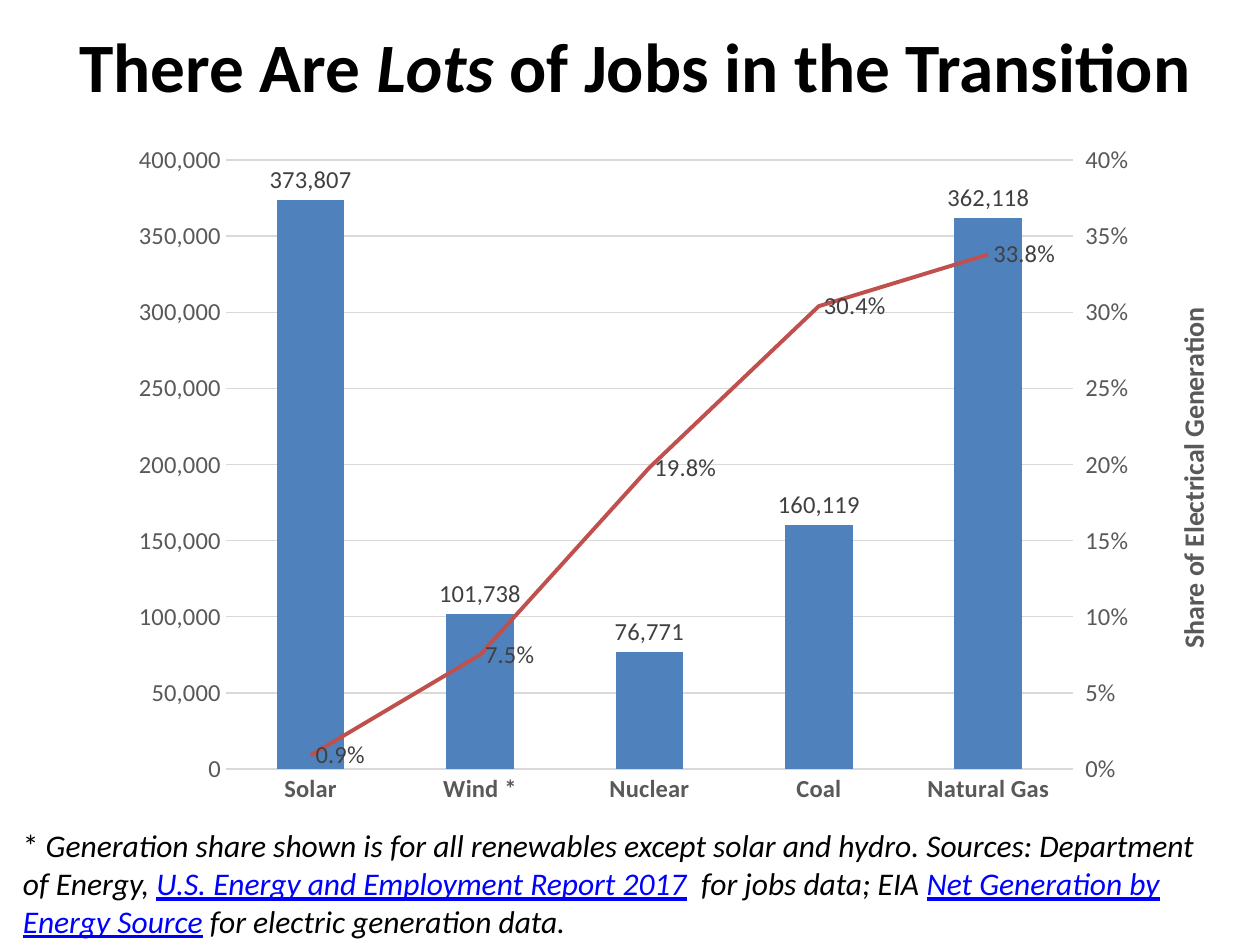
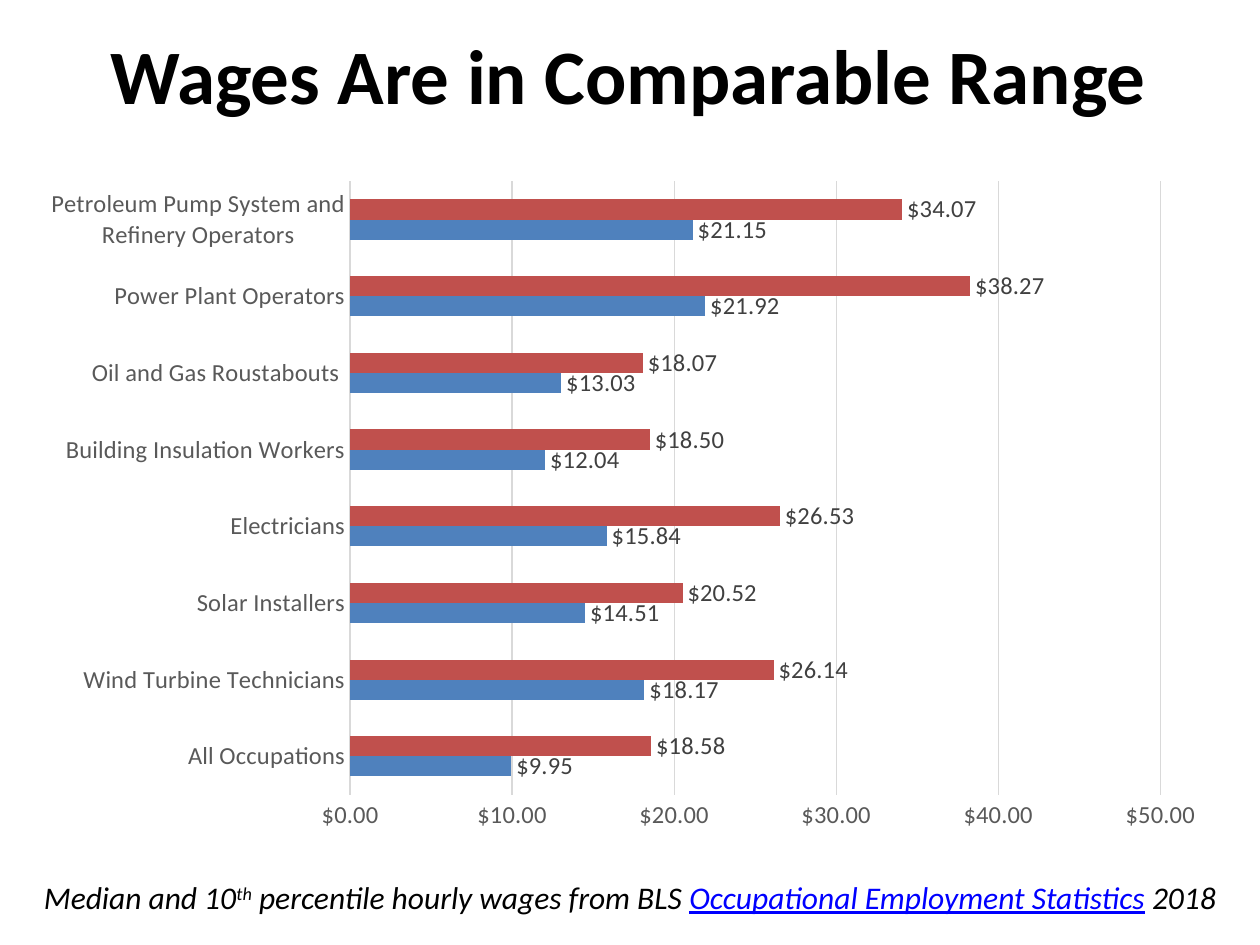
from copy import deepcopy
from dataclasses import dataclass

from pptx import Presentation, oxml
from pptx.chart import axis as axes, data
from pptx.dml import color
from pptx.enum import chart as kinds, text
from pptx.oxml import ns
from pptx.util import Pt

# Shared look
FACE = "Calibri"
BLACK, LINK, GREY, DARK, RULE = "000000", "0000FF", "595959", "404040", "D9D9D9"
FILLS = ["4F81BD", "C0504D"]
LABEL = 14
NOTE = 18
JOBS, SHARE, WAGE = "#,##0", "0.0%", '"$"#,##0.00'
LINE_IDS = ("50010", "50020")
MARK = kinds.XL_TICK_MARK
PLACE = kinds.XL_LABEL_POSITION


@dataclass
class Box:
    left: float
    top: float
    width: float
    height: float

    def lengths(self) -> list:
        return [Pt(n) for n in (self.left, self.top, self.width, self.height)]


@dataclass
class Span:
    words: str
    italic: bool = True
    link: bool = False
    raised: bool = False


@dataclass
class Series:
    name: str
    values: list[float]
    code: str


@dataclass
class Page:
    head: list[Span]
    size: float
    head_box: Box
    note: list[Span]
    note_box: Box


def paint(target, shade: str) -> None:
    """Colour a font, or make a fill solid in that colour."""
    if hasattr(target, "solid"):
        target.solid()
        target.fore_color.rgb = color.RGBColor.from_string(shade)
    else:
        target.color.rgb = color.RGBColor.from_string(shade)


def style(font, size: float, shade: str, bold: bool = False) -> None:
    font.name, font.size, font.bold = FACE, Pt(size), bold
    paint(font, shade)


def stroke(line, shade: str, width: float) -> None:
    paint(line.fill, shade)
    line.width = Pt(width)


# Text
def write(para, spans: list[Span], size: float, bold: bool = False) -> None:
    for span in spans:
        run = para.add_run()
        run.text = span.words
        style(run.font, size, LINK if span.link else BLACK, bold)
        run.font.italic = span.italic
        run.font.underline = span.link
        if span.raised:
            run._r.get_or_add_rPr().set("baseline", "30000")


def add_page(deck, page: Page):
    slide = deck.slides.add_slide(deck.slide_layouts[5])
    head = slide.shapes.title
    head.left, head.top, head.width, head.height = page.head_box.lengths()
    head.text_frame.vertical_anchor = text.MSO_ANCHOR.MIDDLE
    head.text_frame.auto_size = text.MSO_AUTO_SIZE.NONE
    para = head.text_frame.paragraphs[0]
    para.alignment = text.PP_ALIGN.CENTER
    write(para, page.head, page.size, bold=True)

    note = slide.shapes.add_textbox(*page.note_box.lengths()).text_frame
    note.word_wrap = True
    note.auto_size = text.MSO_AUTO_SIZE.SHAPE_TO_FIT_TEXT
    write(note.paragraphs[0], page.note, NOTE)
    return slide


# Charts
def lay_out(parent, index: int, inner: bool = False, **parts: float) -> None:
    """Fix a plot area or axis title at fractions of the chart."""
    for old in parent.xpath("c:layout"):
        parent.remove(old)
    rows = '<c:layoutTarget val="inner"/>' if inner else ""
    rows += "".join(f'<c:{key}Mode val="edge"/>' for key in "xy")
    rows += "".join(f'<c:{key} val="{val}"/>' for key, val in parts.items())
    parent.insert(index, oxml.parse_xml(
        f'<c:layout {ns.nsdecls("c")}><c:manualLayout>{rows}'
        '</c:manualLayout></c:layout>'))


def scale(axis, top: float, step: float, code: str) -> None:
    axis.minimum_scale, axis.maximum_scale = 0, top
    axis.major_unit = step
    axis.tick_labels.number_format = code
    axis.tick_labels.number_format_is_linked = False


def name_axis(axis, words: str, x: float, y: float) -> None:
    axis.has_title = True
    frame = axis.axis_title.text_frame
    para = frame.paragraphs[0]
    para.clear()
    run = para.add_run()
    run.text = words
    style(run.font, 16, GREY, bold=True)
    body = frame._txBody.find(ns.qn("a:bodyPr"))
    body.set("rot", "-5400000")
    body.set("vert", "horz")
    lay_out(axis.axis_title._element, 1, x=x, y=y)


def add_chart(slide, kind, box: Box, names: list[str], rows: list[Series],
              gap: int, bold: bool = False):
    table = data.CategoryChartData()
    table.categories = names
    for row in rows:
        table.add_series(row.name, row.values, row.code)
    chart = slide.shapes.add_chart(kind, *box.lengths(), table).chart
    chart.has_legend = chart.has_title = False
    style(chart.font, 10, BLACK)
    plot = chart.plots[0]
    plot.gap_width, plot.overlap = gap, 0
    plot.vary_by_categories = False

    for bars, row, shade in zip(plot.series, rows, FILLS):
        paint(bars.format.fill, shade)
        bars.invert_if_negative = False
        marks = bars.data_labels
        marks.show_value = True
        marks.number_format, marks.number_format_is_linked = row.code, False
        marks.position = PLACE.OUTSIDE_END
        style(marks.font, LABEL, DARK)

    for axis in (chart.category_axis, chart.value_axis):
        axis.major_tick_mark = axis.minor_tick_mark = MARK.NONE
        style(axis.tick_labels.font, LABEL, GREY)
    style(chart.category_axis.tick_labels.font, LABEL, GREY, bold)
    stroke(chart.category_axis.format.line, RULE, 0.75)
    chart.value_axis.format.line.fill.background()
    chart.value_axis.has_major_gridlines = True
    stroke(chart.value_axis.major_gridlines.format.line, RULE, 0.75)
    return chart


def split_line(chart):
    """Turn the second series into a line and return its right axis."""
    bars = chart.plots[0]._element
    part = bars.xpath("c:ser")[1]
    for tag in ("c:invertIfNegative", "c:spPr"):
        for old in part.xpath(tag):
            part.remove(old)
    ids = "".join(f'<c:axId val="{num}"/>' for num in LINE_IDS)
    group = oxml.parse_xml(
        f'<c:lineChart {ns.nsdecls("c")}><c:grouping val="standard"/>'
        f'<c:varyColors val="0"/><c:marker val="1"/>{ids}</c:lineChart>')
    group.insert(2, part)
    bars.addnext(group)

    # Second pair of axes
    base = chart.value_axis._element
    flat, right = deepcopy(chart.category_axis._element), deepcopy(base)
    for el, own, cross in ((flat, *LINE_IDS), (right, *LINE_IDS[::-1])):
        el.xpath("c:axId")[0].set("val", own)
        el.xpath("c:crossAx")[0].set("val", cross)
    right.xpath("c:axPos")[0].set("val", "r")
    right.xpath("c:crosses")[0].set("val", "max")
    base.addnext(right)
    right.addnext(flat)
    axes.CategoryAxis(flat).visible = False

    curve = chart.series[1]
    stroke(curve.format.line, FILLS[1], 2.25)
    curve.smooth = False
    curve.marker.style = kinds.XL_MARKER_STYLE.NONE
    curve.data_labels.position = PLACE.RIGHT
    side = axes.ValueAxis(right)
    side.has_major_gridlines = False
    side.major_tick_mark = MARK.OUTSIDE
    return side


# Slides
def add_jobs(deck) -> None:
    slide = add_page(deck, Page(
        [Span("There Are ", False), Span("Lots"),
         Span(" of Jobs in the Transition", False)],
        39.6, Box(24, 0, 678, 74),
        [Span("* ", False),
         Span("Generation share shown is for all renewables except solar and "
              "hydro. Sources: Department of Energy, "),
         Span("U.S. Energy and Employment Report 2017", link=True),
         Span("  for jobs data; EIA "),
         Span("Net Generation by Energy Source", link=True),
         Span(" for electric generation data.")],
        Box(6, 468.7, 696, 72.7)))
    chart = add_chart(
        slide, kinds.XL_CHART_TYPE.COLUMN_CLUSTERED, Box(24, 75, 678, 392.4),
        ["Solar", "Wind *", "Nuclear", "Coal", "Natural Gas"],
        [Series("Series 1", [373807, 101738, 76771, 160119, 362118], JOBS),
         Series("Series 2", [0.009, 0.075, 0.198, 0.304, 0.338], SHARE)],
        gap=150, bold=True)
    right = split_line(chart)
    scale(chart.value_axis, 400000, 50000, JOBS)
    scale(right, 0.4, 0.05, "0%")
    name_axis(chart.value_axis, "Number of Jobs", 0.03, 0.43)
    name_axis(right, "Share of Electrical Generation", 0.95, 0.25)
    lay_out(chart._chartSpace.chart.plotArea, 0, True,
            x=0.155, y=0.042, w=0.714, h=0.887)


def add_wages(deck) -> None:
    slide = add_page(deck, Page(
        [Span("Wages Are in Comparable Range", False)],
        44, Box(35.3, 0, 648, 84),
        [Span("Median and 10"), Span("th", raised=True),
         Span(" percentile hourly wages from BLS "),
         Span("Occupational Employment Statistics", link=True),
         Span(" 2018")],
        Box(18, 498.2, 690, 28.8)))
    chart = add_chart(
        slide, kinds.XL_CHART_TYPE.BAR_CLUSTERED, Box(24, 95.8, 672, 386.6),
        ["All Occupations", "Wind Turbine Technicians", "Solar Installers",
         "Electricians", "Building Insulation Workers",
         "Oil and Gas Roustabouts ", "Power Plant Operators",
         "Petroleum Pump System and Refinery Operators"],
        [Series("Series 1", [9.95, 18.17, 14.51, 15.84,
                             12.04, 13.03, 21.92, 21.15], WAGE),
         Series("Series 2", [18.58, 26.14, 20.52, 26.53,
                             18.5, 18.07, 38.27, 34.07], WAGE)],
        gap=182)
    scale(chart.value_axis, 50, 10, WAGE)
    lay_out(chart._chartSpace.chart.plotArea, 0, True,
            x=0.262, y=0.02, w=0.689, h=0.907)


def main() -> None:
    deck = Presentation()
    deck.slide_width, deck.slide_height = Pt(720), Pt(540)
    add_jobs(deck)
    add_wages(deck)
    deck.save("out.pptx")


if __name__ == "__main__":
    main()
